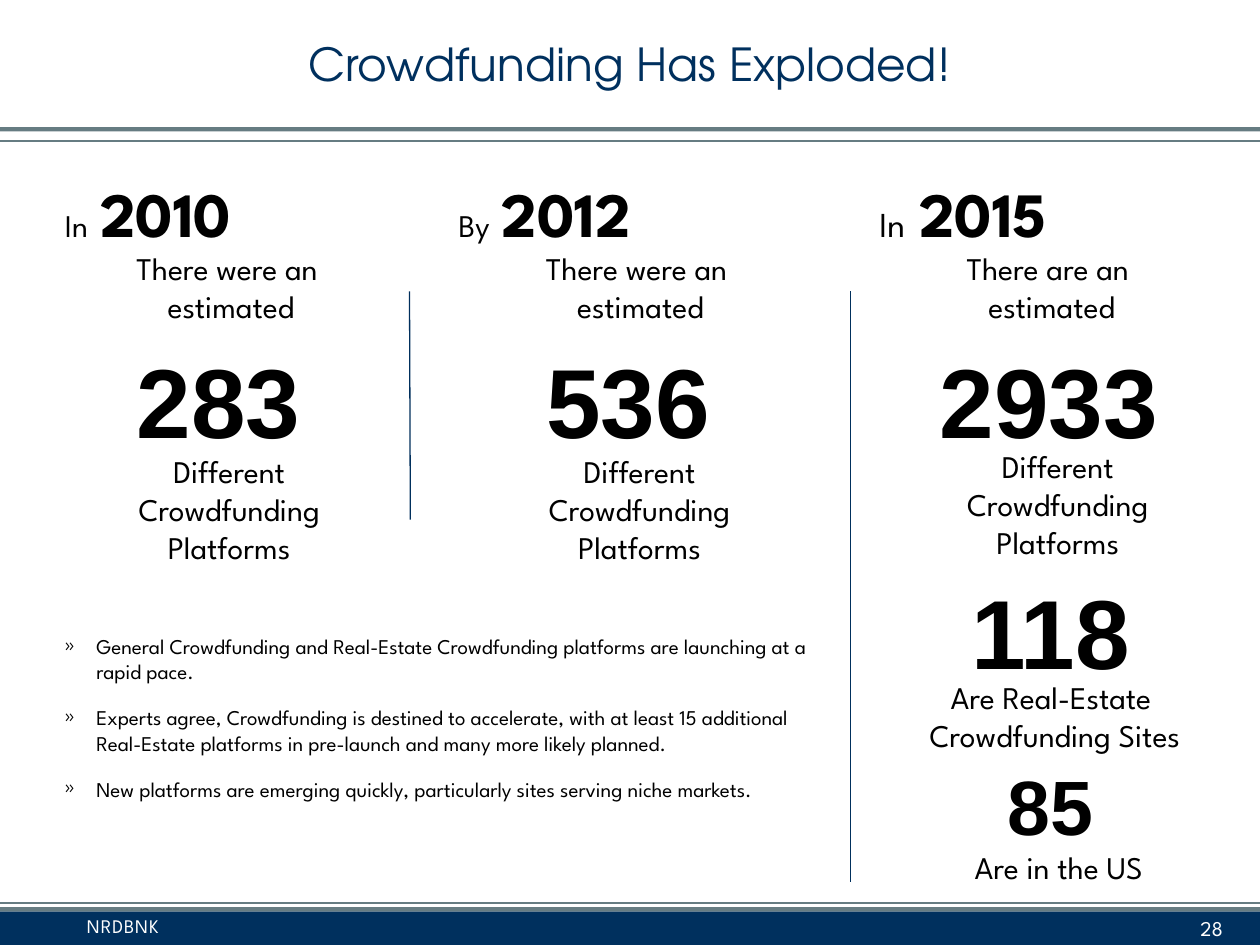
from pptx import Presentation
from pptx.dml.color import RGBColor
from pptx.enum.shapes import MSO_CONNECTOR, MSO_SHAPE
from pptx.enum.text import MSO_ANCHOR, PP_ALIGN
from pptx.oxml.ns import qn
from pptx.util import Pt
from lxml.etree import SubElement

COLORS = {"navy": "00305E", "rule": "667C82", "divider": "002F5C",
          "black": "000000", "white": "FFFFFF"}
BODY, NUMBER, TITLE = "League Spartan", "Arial", "TeX Gyre Adventor"

prs = Presentation()
prs.slide_width, prs.slide_height = Pt(720), Pt(540)
s = prs.slides.add_slide(prs.slide_layouts[6])


def add_text(paragraphs, x, y, w, h, size=18, font=BODY, color="black", bold=False,
             align=PP_ALIGN.CENTER, anchor=MSO_ANCHOR.TOP, left=7.2, bullet=None, spacing=None):
    tf = s.shapes.add_textbox(Pt(x), Pt(y), Pt(w), Pt(h)).text_frame
    tf.word_wrap = True
    tf.vertical_anchor = anchor
    tf.margin_left = Pt(left)
    for i, runs in enumerate(paragraphs):
        p = tf.paragraphs[0] if i == 0 else tf.add_paragraph()
        p.alignment = align
        if bullet:
            pPr = p._p.get_or_add_pPr()
            pPr.set("marL", str(Pt(18)))
            pPr.set("indent", str(-Pt(18)))
            SubElement(pPr, qn("a:buFont")).set("typeface", font)
            SubElement(pPr, qn("a:buChar")).set("char", bullet)
            if i:
                p.space_before = Pt(12)
        if isinstance(runs, str):
            runs = [(runs, size, bold)]
        for content, run_size, run_bold in runs:
            for j, line in enumerate(content.split("\n")):
                if j:
                    p.add_line_break()
                r = p.add_run()
                r.text = line
                r.font.size = Pt(run_size)
                r.font.bold = run_bold
                r.font.name = font
                r.font.color.rgb = RGBColor.from_string(COLORS[color])
                if spacing:
                    r._r.get_or_add_rPr().set("spc", str(spacing))


def add_line(x1, y1, x2, y2, color, width):
    line = s.shapes.add_connector(MSO_CONNECTOR.STRAIGHT, Pt(x1), Pt(y1), Pt(x2), Pt(y2))
    line.line.color.rgb = RGBColor.from_string(COLORS[color])
    line.line.width = Pt(width)
    SubElement(line._element.spPr, qn("a:effectLst"))


for y, h, color in [(518.4, 2.6, "rule"), (521, 19, "navy"), (72.7, 2.4, "rule")]:
    sp = s.shapes.add_shape(MSO_SHAPE.RECTANGLE, 0, Pt(y), Pt(720), Pt(h))
    sp.shadow.inherit = False
    sp.fill.solid()
    sp.fill.fore_color.rgb = RGBColor.from_string(COLORS[color])
    sp.line.fill.background()

for x1, y1, x2, y2, color, width in [
    (0, 515.8, 720, 515.8, "rule", 1),
    (0, 80.6, 720, 80.6, "rule", 0.75),
    (234, 166.5, 234.5, 297, "divider", 0.75),
    (486, 166.5, 486, 504, "divider", 0.75),
]:
    add_line(x1, y1, x2, y2, color, width)

add_text(["Crowdfunding Has Exploded!"], 0, 0, 720, 72, size=26, font=TITLE,
         color="navy", anchor=MSO_ANCHOR.MIDDLE)
add_text(["NRDBNK"], 0, 519, 528, 21, size=11, color="white", align=PP_ALIGN.LEFT,
         left=49.7, spacing=50)
add_text(["28"], 538, 521, 168, 19, size=12, color="white", align=PP_ALIGN.RIGHT,
         anchor=MSO_ANCHOR.MIDDLE)

columns = [
    ("In", 18, 28, "2010", "were", "283", 30, 24, 65.5, 62, 255),
    ("By", 18, 28, "2012", "were", "536", 255, 258, 299.5, 296.5, 255),
    ("In", 20, 32, "2015", "are", "2933", 495.5, 493, 540, 535.5, 252),
]
for word, size, gap, year, verb, count, year_x, verb_x, count_x, label_x, label_y in columns:
    add_text([[(word, size, False), (" ", gap, False), (year, 36, True)]],
             year_x, 96, 144, 37, align=PP_ALIGN.LEFT)
    add_text([f"There {verb} an \nestimated"], verb_x, 139, 216, 51)
    add_text([count], count_x - 14, 191, 147, 72, size=56, font=NUMBER, bold=True)
    add_text(["Different Crowdfunding\nPlatforms"], label_x, label_y, 138, 73)

add_text(["118"], 492.5, 323, 216, 75, size=56, font=NUMBER, bold=True)
add_text(["Are Real-Estate  \nCrowdfunding Sites "], 488, 384, 234, 51)
add_text(["85"], 560.5, 430, 80, 60, size=44, font=NUMBER, bold=True)
add_text(["Are in the US"], 533, 481, 144, 29)

add_text([
    "General Crowdfunding and Real-Estate Crowdfunding platforms are launching at a rapid pace.",
    "Experts agree, Crowdfunding is destined to accelerate, with at least 15 additional "
    "Real-Estate platforms in pre-launch and many more likely planned.",
    "New platforms are emerging quickly, particularly sites serving niche markets.",
], 30, 358.5, 445, 119, size=12, align=PP_ALIGN.LEFT, bullet="»")

prs.save("out.pptx")
